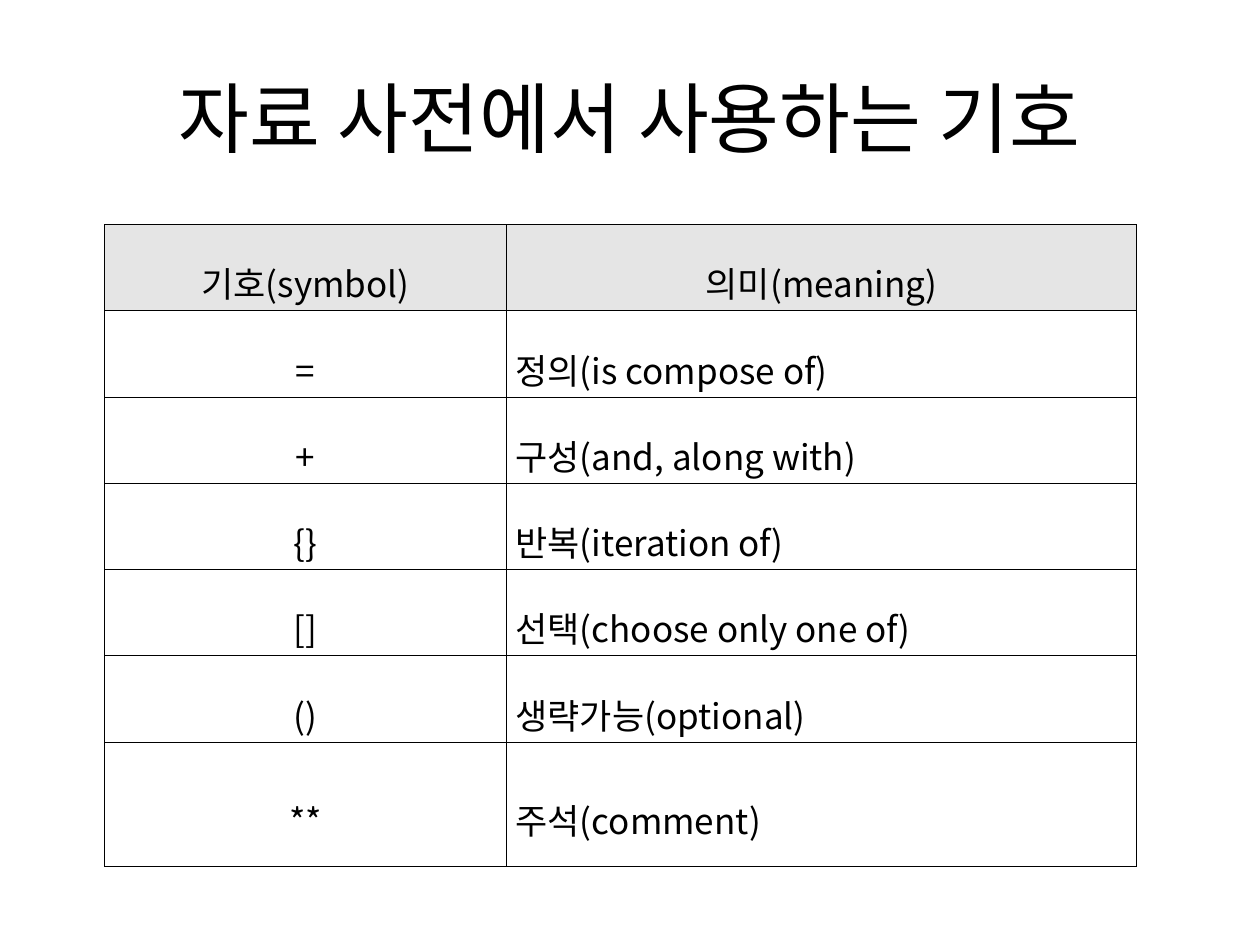
from lxml.etree import SubElement
from pptx import Presentation
from pptx.dml.color import RGBColor
from pptx.enum.text import MSO_ANCHOR, PP_ALIGN
from pptx.oxml.ns import qn
from pptx.util import Cm, Pt

TITLE = "자료 사전에서 사용하는 기호"
HEADINGS = ("기호(symbol)", "의미(meaning)")
SYMBOLS = [
    ("=", "정의(is compose of)"),
    ("+", "구성(and, along with)"),
    ("{}", "반복(iteration of)"),
    ("[]", "선택(choose only one of)"),
    ("()", "생략가능(optional)"),
    ("**", "주석(comment)"),
]
FONT = "Noto Sans CJK KR"
BLACK, HEADING_FILL = "000000", "E5E5E5"
COLUMN_WIDTHS = (Cm(8.1), Cm(12.7))
ROW_HEIGHT, LAST_ROW_HEIGHT = Cm(1.65), Cm(2.51)
TITLE_BOX = {"left": Cm(1.27), "top": Cm(0.76), "width": Cm(22.86), "height": Cm(3.18)}
CELL_FORMAT = {
    "margin_left": Cm(0.18),
    "margin_right": Cm(0.18),
    "margin_top": Cm(0.05),
    "margin_bottom": Cm(0.05),
    "vertical_anchor": MSO_ANCHOR.MIDDLE,
}


def apply(target, values):
    """Set every attribute named in a dict of format values."""
    for key, value in values.items():
        setattr(target, key, value)


def color(hex_code):
    """Turn a hex string into a colour."""
    return RGBColor.from_string(hex_code)


def write(frame, wording, size, alignment, line_spacing=None):
    """Put one formatted paragraph in a text frame."""
    paragraph = frame.paragraphs[0]
    apply(paragraph, {"alignment": alignment, "line_spacing": line_spacing})
    run = paragraph.add_run()
    run.text = wording
    apply(run.font, {"name": FONT, "size": Pt(size), "bold": False})
    run.font.color.rgb = color(BLACK)
    SubElement(run.font._element, qn("a:ea"), typeface=FONT)


def add_borders(cell):
    """Draw a thin line on all four sides of a cell."""
    properties = cell._tc.get_or_add_tcPr()
    for side in ("lnL", "lnR", "lnT", "lnB"):
        line = SubElement(properties, qn(f"a:{side}"), w=str(Pt(0.28)))
        SubElement(SubElement(line, qn("a:solidFill")), qn("a:srgbClr"), val=BLACK)


def fill_cell(cell, wording, alignment, is_heading):
    """Format one table cell and write its wording."""
    apply(cell, CELL_FORMAT)
    add_borders(cell)
    if is_heading:
        cell.fill.solid()
        cell.fill.fore_color.rgb = color(HEADING_FILL)
    else:
        cell.fill.background()
    write(cell.text_frame, wording, 20, alignment, 1.6)


def add_symbol_table(slide):
    """Add the table of symbols and their meanings."""
    rows = [HEADINGS, *SYMBOLS]
    heights = [ROW_HEIGHT] * len(SYMBOLS) + [LAST_ROW_HEIGHT]
    table = slide.shapes.add_table(
        len(rows), len(HEADINGS), Cm(2.11), Cm(4.52), sum(COLUMN_WIDTHS), sum(heights)
    ).table
    apply(table, {"first_row": False, "horz_banding": False})
    for column, width in zip(table.columns, COLUMN_WIDTHS):
        column.width = width
    for row_index, (wordings, height) in enumerate(zip(rows, heights)):
        table.rows[row_index].height = height
        is_heading = row_index == 0
        for column_index, wording in enumerate(wordings):
            centred = is_heading or column_index == 0
            alignment = PP_ALIGN.CENTER if centred else PP_ALIGN.JUSTIFY
            fill_cell(table.cell(row_index, column_index), wording, alignment, is_heading)


def main():
    """Build the slide and save it."""
    presentation = Presentation()
    apply(presentation, {"slide_width": Cm(25.4), "slide_height": Cm(19.05)})
    slide = presentation.slides.add_slide(presentation.slide_layouts[5])
    title = slide.shapes.title
    apply(title, TITLE_BOX)
    title.text_frame.vertical_anchor = MSO_ANCHOR.MIDDLE
    write(title.text_frame, TITLE, 44, PP_ALIGN.CENTER)
    add_symbol_table(slide)
    presentation.save("out.pptx")


if __name__ == "__main__":
    main()
